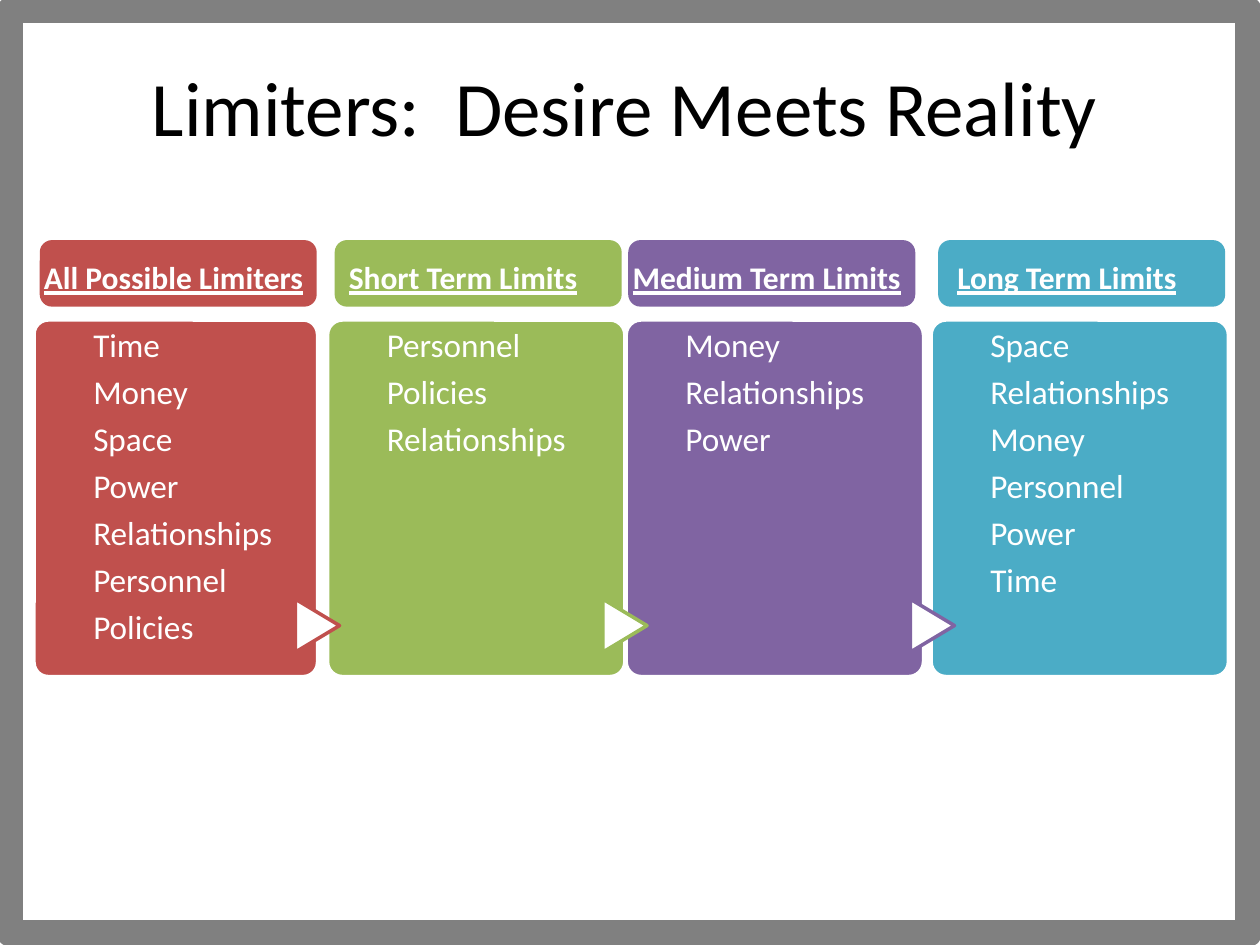
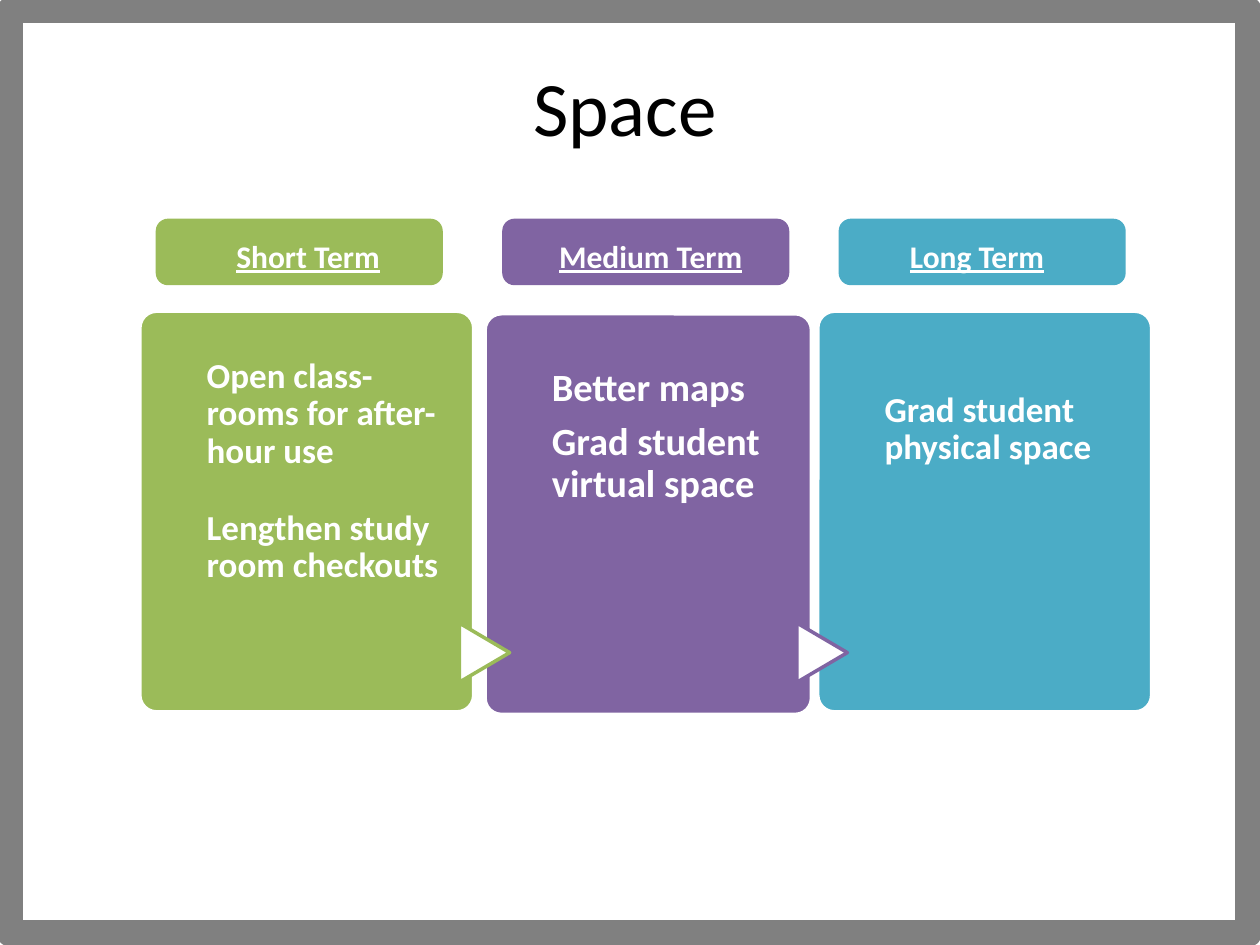
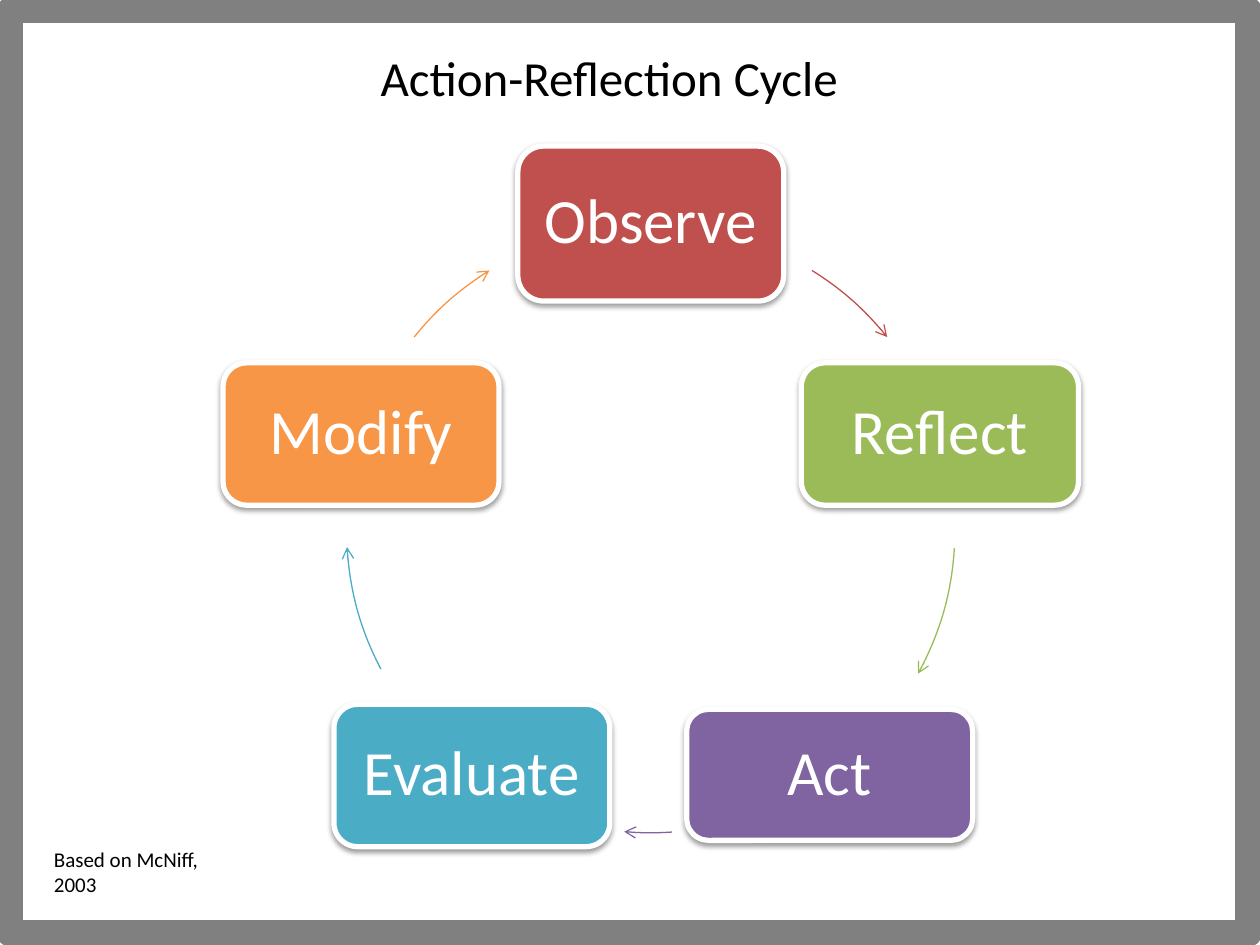
from dataclasses import dataclass

from lxml.etree import SubElement
from pptx import Presentation
from pptx.dml.color import RGBColor as RGB
from pptx.enum.shapes import MSO_SHAPE as SHAPE
from pptx.enum.text import MSO_ANCHOR as ANCHOR, PP_ALIGN as ALIGN
from pptx.oxml.ns import qn
from pptx.util import Inches, Pt


@dataclass(frozen=True)
class Theme:
    font: str = "Calibri"
    white: str = "FFFFFF"
    black: str = "000000"
    frame: str = "808080"
    red: str = "C0504D"
    green: str = "9BBB59"
    purple: str = "8064A2"
    teal: str = "4BACC6"
    orange: str = "F79646"
    title: int = 44
    node: int = 36
    subtitle: int = 28
    header: int = 18
    note: int = 12


T = Theme()
LEFT, CENTER = ALIGN.LEFT, ALIGN.CENTER


def add_box(slide, kind, at, fill, line, width, adj=None):
    s = slide.shapes.add_shape(kind, *map(Inches, at))
    s.shadow.inherit = False
    if fill:
        s.fill.solid()
        s.fill.fore_color.rgb = RGB.from_string(fill)
    else:
        s.fill.background()
    s.line.color.rgb = RGB.from_string(line)
    s.line.width = Pt(width)
    for i, value in enumerate(adj or []):
        s.adjustments[i] = value
    return s


def write(s, lines, size, color, align=LEFT, frame=None, para=None, gap=0, **font):
    tf = s.text_frame
    for name, value in {"word_wrap": True, "vertical_anchor": ANCHOR.TOP, **(frame or {})}.items():
        setattr(tf, name, value)
    for i, line in enumerate(lines):
        p = tf.paragraphs[0] if i == 0 else tf.add_paragraph()
        p.alignment = align
        for name, value in (para or {}).items():
            setattr(p, name, value)
        if i:
            p.space_before = Pt(gap)
        r = p.add_run()
        r.text = line
        r.font.color.rgb = RGB.from_string(color)
        for name, value in {"name": T.font, "size": Pt(size), **font}.items():
            setattr(r.font, name, value)


prs = Presentation()
prs.slide_width, prs.slide_height = Inches(10), Inches(7.5)
blank = prs.slide_layouts[6]
limiters, space, cycle = [prs.slides.add_slide(blank) for _ in range(3)]

frame = add_box(limiters, SHAPE.RECTANGLE, (0.08, 0.08, 9.83, 7.33), T.white, T.frame, 15)
blank.shapes.element.append(frame.element)

title_at = (0.92, 0.42, 8.08, 0.84)
labels = [
    (limiters, "Limiters:  Desire Meets Reality", title_at, T.title, CENTER),
    (space, "Space", title_at, T.title, CENTER),
    (cycle, "Action-Reflection Cycle", (0.67, 0.33, 8.33, 0.57), T.subtitle, CENTER),
    (cycle, "Based on McNiff, 2003", (0.33, 6.67, 1.67, 0.5), T.note, LEFT),
]
for slide, text, at, size, align in labels:
    s = slide.shapes.add_textbox(*map(Inches, at))
    write(s, [text], size, T.black, align)

boards = [
    dict(
        slide=limiters, height=2.83, text_dx=0.47, text_trim=0.6, bold=False,
        header_top=1.92, arrow=(4.79, 0.42, 0.35), arrows=[2.31, 4.75, 7.19],
        columns=[
            dict(color=T.red, card=(0.27, 2.54, 2.25), size=19, top=0.07, gap=6.3,
                 tab=(0.33, 2.17), head=(0.25, 2.33, LEFT), name="All Possible Limiters",
                 items=["Time", "Money", "Space", "Power", "Relationships", "Personnel", "Policies"]),
            dict(color=T.green, card=(2.6, 2.54, 2.36), size=19, top=0.07, gap=6.3,
                 tab=(2.67, 2.25), head=(2.67, 2.05, LEFT), name="Short Term Limits",
                 items=["Personnel", "Policies", "Relationships"]),
            dict(color=T.purple, card=(4.97, 2.54, 2.36), size=19, top=0.07, gap=6.3,
                 tab=(5, 2.25), head=(4.92, 2.33, CENTER), name="Medium Term Limits",
                 items=["Money", "Relationships", "Power"]),
            dict(color=T.teal, card=(7.39, 2.54, 2.36), size=19, top=0.07, gap=6.3,
                 tab=(7.46, 2.25), head=(7.5, 2.17, LEFT), name="Long Term Limits",
                 items=["Space", "Relationships", "Money", "Personnel", "Power", "Time"]),
        ],
    ),
    dict(
        slide=space, height=3.18, text_dx=0.53, text_trim=0.67, bold=True,
        header_top=1.75, arrow=(4.98, 0.47, 0.4), arrows=[3.61, 6.29],
        columns=[
            dict(color=T.green, card=(1.11, 2.47, 2.65), size=20, top=0.37, gap=22,
                 tab=(1.25, 2.25), head=(1.42, 2.05, CENTER), name="Short Term",
                 items=["Open class-rooms for after-hour use", "Lengthen study room checkouts"]),
            dict(color=T.purple, card=(3.85, 2.49, 2.59), size=22, top=0.43, gap=7.3,
                 tab=(4, 2.25), head=(4, 2.33, CENTER), name="Medium Term",
                 items=["Better maps", "Grad student virtual space"]),
            dict(color=T.teal, card=(6.49, 2.47, 2.65), size=20, top=0.68, gap=0,
                 tab=(6.67, 2.25), head=(6.67, 2.17, CENTER), name="Long Term",
                 items=["Grad student physical space"]),
        ],
    ),
]

for board in boards:
    slide, columns = board["slide"], board["columns"]
    for i, col in enumerate(columns):
        left, top, width = col["card"]
        height = board["height"]
        add_box(slide, SHAPE.ROUNDED_RECTANGLE, (left, top, width, height), col["color"], T.white, 2, [0.05])
        if i:
            at = (board["arrows"][i - 1], *board["arrow"])
            s = add_box(slide, SHAPE.FLOWCHART_EXTRACT, at, T.white, columns[i - 1]["color"], 2)
            s.rotation = 90
        at = (left + board["text_dx"], top, width - board["text_trim"], height)
        s = slide.shapes.add_textbox(*map(Inches, at))
        insets = dict(margin_left=0, margin_right=0, margin_bottom=0, margin_top=Inches(col["top"]))
        write(s, col["items"], col["size"], T.white, frame=insets, para={"line_spacing": 0.9},
              gap=col["gap"], bold=board["bold"])
    for col in columns:
        top = board["header_top"]
        tab_left, tab_width = col["tab"]
        left, width, align = col["head"]
        add_box(slide, SHAPE.ROUNDED_RECTANGLE, (tab_left, top, tab_width, 0.5), col["color"], col["color"], 2)
        s = slide.shapes.add_textbox(*map(Inches, (left, top + 0.08, width, 0.4)))
        write(s, [col["name"]], T.header, T.white, align, bold=True, underline=True)

ring = (2.75, 1.78, 4.83, 4.83)
steps = [
    ("Observe", T.red, (4.11, 1.16, 2.11, 1.23), (302, 321)),
    ("Reflect", T.green, (6.36, 2.88, 2.2, 1.13), (3.7, 28.5)),
    ("Act", T.purple, (5.45, 5.63, 2.27, 1.04), (86, 95)),
    ("Evaluate", T.teal, (2.65, 5.59, 2.19, 1.13), (152.5, 176.5)),
    ("Modify", T.orange, (1.77, 2.88, 2.19, 1.13), (219, 238)),
]
node_frame = {"vertical_anchor": ANCHOR.MIDDLE, "margin_left": Inches(0.08), "margin_right": Inches(0.08)}
for name, color, at, angles in steps:
    s = add_box(cycle, SHAPE.ROUNDED_RECTANGLE, at, color, T.white, 3)
    effects = s.element.spPr.find(qn("a:effectLst"))
    shadow = SubElement(effects, qn("a:outerShdw"), blurRad=str(Pt(3.1)), dist=str(Pt(1.6)),
                        dir="5400000", rotWithShape="0")
    tint = SubElement(shadow, qn("a:srgbClr"), val=T.black)
    SubElement(tint, qn("a:alpha"), val="38000")
    write(s, [name], T.node, T.white, CENTER, node_frame, {"line_spacing": 0.9})
    s = add_box(cycle, SHAPE.ARC, ring, None, color, 0.75, [a * 0.6 for a in angles])
    SubElement(s.element.spPr.find(qn("a:ln")), qn("a:tailEnd"), type="arrow")

prs.save("out.pptx")
